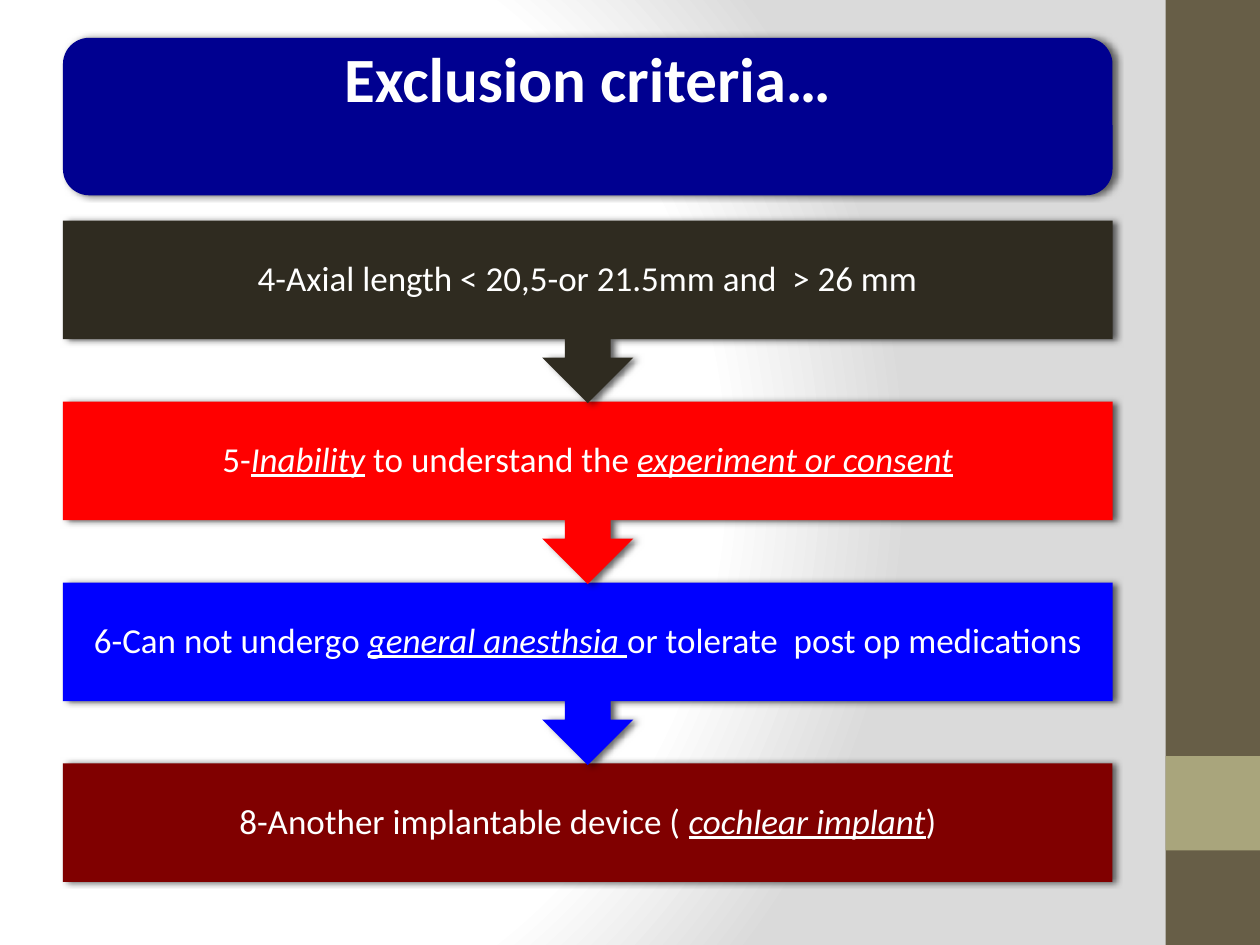
"""Build the exclusion criteria slide: a title bar over a chain of callouts."""
from dataclasses import dataclass

from lxml import etree
from pptx import Presentation
from pptx.dml.color import RGBColor
from pptx.enum.shapes import MSO_SHAPE
from pptx.enum.text import MSO_ANCHOR, PP_ALIGN
from pptx.oxml import parse_xml
from pptx.oxml.ns import qn
from pptx.shapes.autoshape import Shape
from pptx.slide import Slide
from pptx.util import Inches, Pt

RECT = MSO_SHAPE.RECTANGLE
ROUND = MSO_SHAPE.ROUNDED_RECTANGLE
CALLOUT = MSO_SHAPE.DOWN_ARROW_CALLOUT
TOP = MSO_ANCHOR.TOP
MIDDLE = MSO_ANCHOR.MIDDLE
CENTER = PP_ALIGN.CENTER
SPACE = "http://schemas.openxmlformats.org/drawingml/2006/main"


@dataclass(frozen=True)
class Theme:
    font: str = "Calibri"
    title: int = 36
    body: int = 20
    text: str = "FFFFFF"
    light: str = "FFFFFF"
    shade: str = "DADADA"
    side: str = "675E47"
    patch: str = "A9A57C"
    bar: str = "000090"
    dark: str = "2F2B20"
    red: str = "FF0000"
    blue: str = "0000FF"
    maroon: str = "800000"
    shadow: str = "000000"


@dataclass(frozen=True)
class Box:
    left: float
    top: float
    width: float
    height: float


@dataclass(frozen=True)
class Phrase:
    text: str
    stress: bool = False


@dataclass(frozen=True)
class Step:
    fill: str
    words: tuple[Phrase, ...]


THEME = Theme()
LEFT, WIDTH = 0.5, 8.33
FIRST, LAST = 1.75, 6.06
BODY, TALL = 0.94, 1.45
STEPS = (
    Step(THEME.dark, (Phrase("4-Axial length < 20,5-or 21.5mm and  > 26 mm"),)),
    Step(THEME.red, (
        Phrase("5-"), Phrase("Inability", True), Phrase(" to understand the "),
        Phrase("experiment or consent", True))),
    Step(THEME.blue, (
        Phrase("6-Can not undergo "), Phrase("general anesthsia ", True),
        Phrase("or tolerate  post op medications"))),
    Step(THEME.maroon, (
        Phrase("8-Another implantable device ( "),
        Phrase("cochlear implant", True), Phrase(")"))),
)


def paint(slide: Slide) -> None:
    """Fill the background with a radial gradient."""
    slide.background.fill.solid()
    stops = ((0, THEME.light), (75, THEME.light), (100, THEME.shade))
    marks = "".join(
        f'<a:gs pos="{spot * 1000}"><a:srgbClr val="{tone}"/></a:gs>'
        for spot, tone in stops)
    grad = parse_xml(
        f'<a:gradFill xmlns:a="{SPACE}" rotWithShape="1">'
        f'<a:gsLst>{marks}</a:gsLst><a:path path="circle">'
        '<a:fillToRect l="20000" t="50000" r="100000" b="50000"/>'
        '</a:path></a:gradFill>')
    old = slide.element.find(".//" + qn("p:bgPr")).find(qn("a:solidFill"))
    old.getparent().replace(old, grad)


def block(slide: Slide, kind: MSO_SHAPE, box: Box, fill: str) -> Shape:
    """Add a flat filled shape without an outline."""
    shape = slide.shapes.add_shape(
        kind, Inches(box.left), Inches(box.top),
        Inches(box.width), Inches(box.height))
    shape.fill.solid()
    shape.fill.fore_color.rgb = RGBColor.from_string(fill)
    shape.line.fill.background()
    shape.shadow.inherit = False
    return shape


def lift(shape: Shape) -> None:
    """Give a shape a soft shadow to its right."""
    glow = etree.SubElement(
        shape.element.spPr.find(qn("a:effectLst")), qn("a:outerShdw"),
        blurRad=str(Pt(4)), dist=str(Pt(2)), dir="0", rotWithShape="0")
    tone = etree.SubElement(glow, qn("a:srgbClr"), val=THEME.shadow)
    etree.SubElement(tone, qn("a:alpha"), val="60000")


def write(shape: Shape, words: tuple[Phrase, ...], size: int, pad: float,
          bold: bool = False) -> None:
    """Set centred text in a shape, with stressed phrases marked."""
    frame = shape.text_frame
    frame.word_wrap = True
    frame.vertical_anchor = MIDDLE
    frame.margin_left = frame.margin_right = Inches(pad)
    frame.margin_top = frame.margin_bottom = Inches(pad)
    para = frame.paragraphs[0]
    para.alignment = CENTER
    para.line_spacing = 0.9
    for phrase in words:
        run = para.add_run()
        run.text = phrase.text
        font = run.font
        font.name, font.size, font.bold = THEME.font, Pt(size), bold
        font.italic = font.underline = phrase.stress
        font.color.rgb = RGBColor.from_string(THEME.text)


def main() -> None:
    """Draw the slide and save it."""
    deck = Presentation()
    deck.slide_width, deck.slide_height = Inches(10), Inches(7.5)
    slide = deck.slides.add_slide(deck.slide_layouts[6])
    paint(slide)
    block(slide, RECT, Box(9.25, 0, 0.75, 7.5), THEME.side)
    block(slide, RECT, Box(9.25, 6, 0.75, 0.75), THEME.patch)

    title = block(slide, ROUND, Box(LEFT, 0.3, WIDTH, 1.25), THEME.bar)
    lift(title)
    write(title, (Phrase("Exclusion criteria…"),), THEME.title, 0.15, True)
    title.text_frame.vertical_anchor = TOP
    title.text_frame.margin_top = Inches(0.02)

    end = len(STEPS) - 1
    pitch = (LAST - FIRST) / end
    for rank, step in reversed(list(enumerate(STEPS))):
        kind, height = (RECT, BODY) if rank == end else (CALLOUT, TALL)
        box = Box(LEFT, FIRST + rank * pitch, WIDTH, height)
        shape = block(slide, kind, box, step.fill)
        lift(shape)
        write(shape, step.words, THEME.body, 0.16)

    deck.save("out.pptx")


if __name__ == "__main__":
    main()
